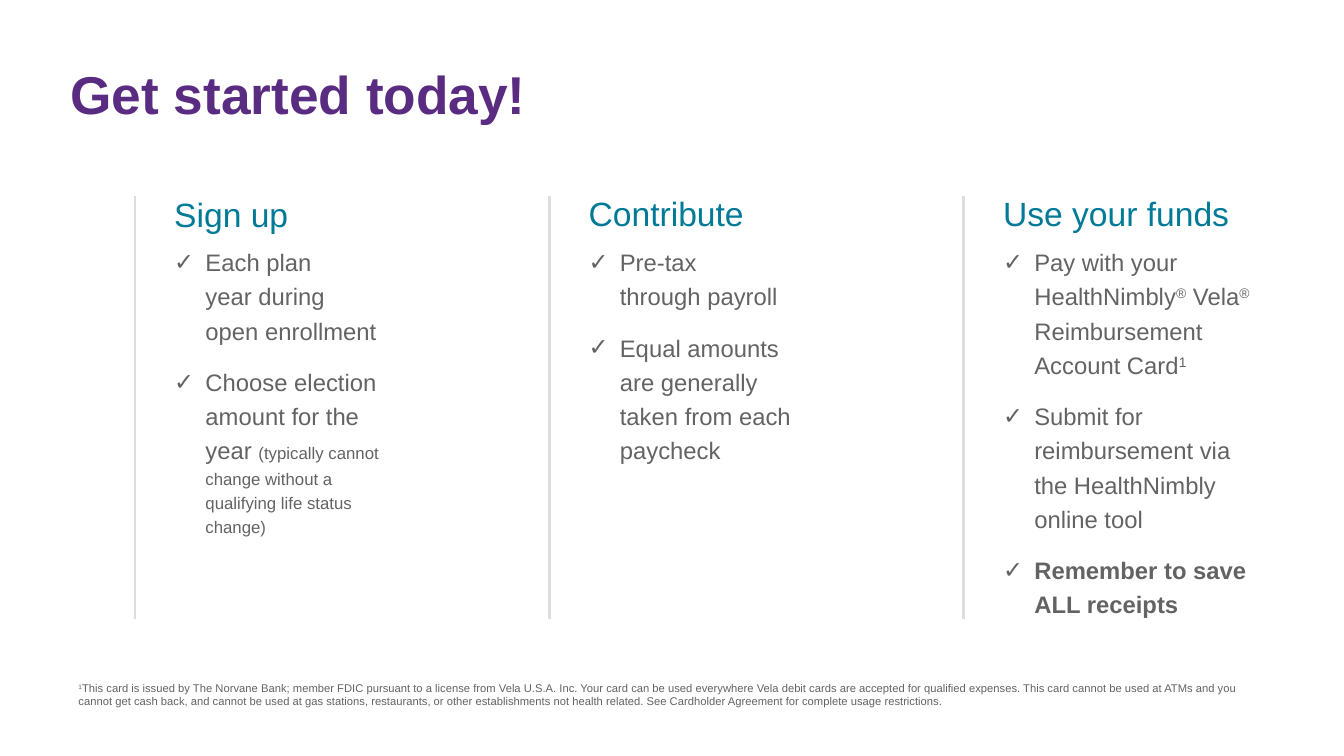
from dataclasses import dataclass

from lxml.etree import SubElement
from pptx import Presentation
from pptx.dml.color import RGBColor
from pptx.enum.shapes import MSO_CONNECTOR as Connector
from pptx.enum.text import MSO_ANCHOR as Anchor
from pptx.oxml.ns import qn
from pptx.util import Inches, Pt

FONT = "Arial"
PURPLE, TEAL, GRAY, RULE_GRAY = "592C82", "007A96", "626362", "DCDDDE"
FIRST_RULE, COLUMN_PITCH, TEXT_GAP = 1.34, 4.11, 0.29
RULE_TOP, RULE_BOTTOM, TEXT_TOP = 1.94, 6.14, 1.83


@dataclass(frozen=True)
class Piece:
    text: str
    size: float = 17
    bold: bool = False
    raised: bool = False


@dataclass(frozen=True)
class Column:
    heading: str
    width: float
    height: float
    items: list[list[Piece]]


REGISTERED = Piece("®", raised=True)

COLUMNS = [
    Column("Sign up", 2.43, 3.69, [
        [Piece("Each plan\nyear during\nopen enrollment")],
        [Piece("Choose election amount for the year "),
         Piece("(typically cannot change without a qualifying life status change)", size=12)],
    ]),
    Column("Contribute", 2.43, 2.97, [
        [Piece("Pre-tax\nthrough payroll")],
        [Piece("Equal amounts are generally taken from each paycheck")],
    ]),
    Column("Use your funds", 2.85, 4.54, [
        [Piece("Pay with your HealthNimbly"), REGISTERED, Piece(" Vela"), REGISTERED,
         Piece(" Reimbursement Account Card"), Piece("1", raised=True)],
        [Piece("Submit for reimbursement via\nthe HealthNimbly online tool")],
        [Piece("Remember to save\nALL receipts", bold=True)],
    ]),
]

FOOTNOTE = (
    "This card is issued by The Norvane Bank; member FDIC pursuant to a license from "
    "Vela U.S.A. Inc. Your card can be used everywhere Vela debit cards are accepted for "
    "qualified expenses. This card cannot be used at ATMs and you cannot get cash back, and "
    "cannot be used at gas stations, restaurants, or other establishments not health related. "
    "See Cardholder Agreement for complete usage restrictions."
)


def color(value: str) -> RGBColor:
    return RGBColor.from_string(value)


def add_text_box(slide, left: float, top: float, width: float, height: float):
    shape = slide.shapes.add_textbox(Inches(left), Inches(top), Inches(width), Inches(height))
    frame = shape.text_frame
    frame.word_wrap = True
    frame.vertical_anchor = Anchor.TOP
    return frame


def add_text(paragraph, text: str, *, size: float, fill: str,
             bold: bool = False, raised: bool = False) -> None:
    """Append formatted text, turning each newline into a line break."""
    for index, line in enumerate(text.split("\n")):
        if index:
            paragraph.add_line_break()
        run = paragraph.add_run()
        run.text = line
        run.font.name = FONT
        run.font.size = Pt(size)
        run.font.bold = bold
        run.font.color.rgb = color(fill)
        if raised:
            run._r.get_or_add_rPr().set("baseline", "30000")


def add_check_bullet(paragraph) -> None:
    properties = paragraph._p.get_or_add_pPr()
    properties.set("marL", str(Inches(0.31)))
    properties.set("indent", str(-Inches(0.31)))
    SubElement(properties, qn("a:buFont"), typeface=FONT)
    SubElement(properties, qn("a:buChar"), char="✓")


def add_rule(slide, x: float) -> None:
    rule = slide.shapes.add_connector(
        Connector.STRAIGHT, Inches(x), Inches(RULE_TOP), Inches(x), Inches(RULE_BOTTOM))
    rule.line.color.rgb = color(RULE_GRAY)
    rule.line.width = Pt(2)
    SubElement(rule._element.spPr, qn("a:effectLst"))


def add_column(slide, column: Column, x: float) -> None:
    add_rule(slide, x)
    frame = add_text_box(slide, x + TEXT_GAP, TEXT_TOP, column.width, column.height)
    heading = frame.paragraphs[0]
    heading.line_spacing = 1.1
    heading.space_after = Pt(6)
    add_text(heading, column.heading, size=24, fill=TEAL)
    for item in column.items:
        paragraph = frame.add_paragraph()
        add_check_bullet(paragraph)
        paragraph.line_spacing = 1.2
        paragraph.space_after = Pt(12)
        for piece in item:
            add_text(paragraph, piece.text, size=piece.size, fill=GRAY,
                     bold=piece.bold, raised=piece.raised)


def main() -> None:
    presentation = Presentation()
    presentation.slide_width = Inches(13.33)
    presentation.slide_height = Inches(7.5)
    slide = presentation.slides.add_slide(presentation.slide_layouts[6])

    title = add_text_box(slide, 0.6, 0.3, 11.08, 0.96)
    title.margin_top = title.margin_bottom = Inches(0.1)
    title.paragraphs[0].line_spacing = Pt(60.8)
    add_text(title.paragraphs[0], "Get started today!", size=38, fill=PURPLE, bold=True)

    for index, column in enumerate(COLUMNS):
        add_column(slide, column, FIRST_RULE + index * COLUMN_PITCH)

    footnote = add_text_box(slide, 0.68, 6.71, 11.91, 0.61).paragraphs[0]
    add_text(footnote, "1", size=8, fill=GRAY, raised=True)
    add_text(footnote, FOOTNOTE, size=8, fill=GRAY)

    presentation.save("out.pptx")


if __name__ == "__main__":
    main()
